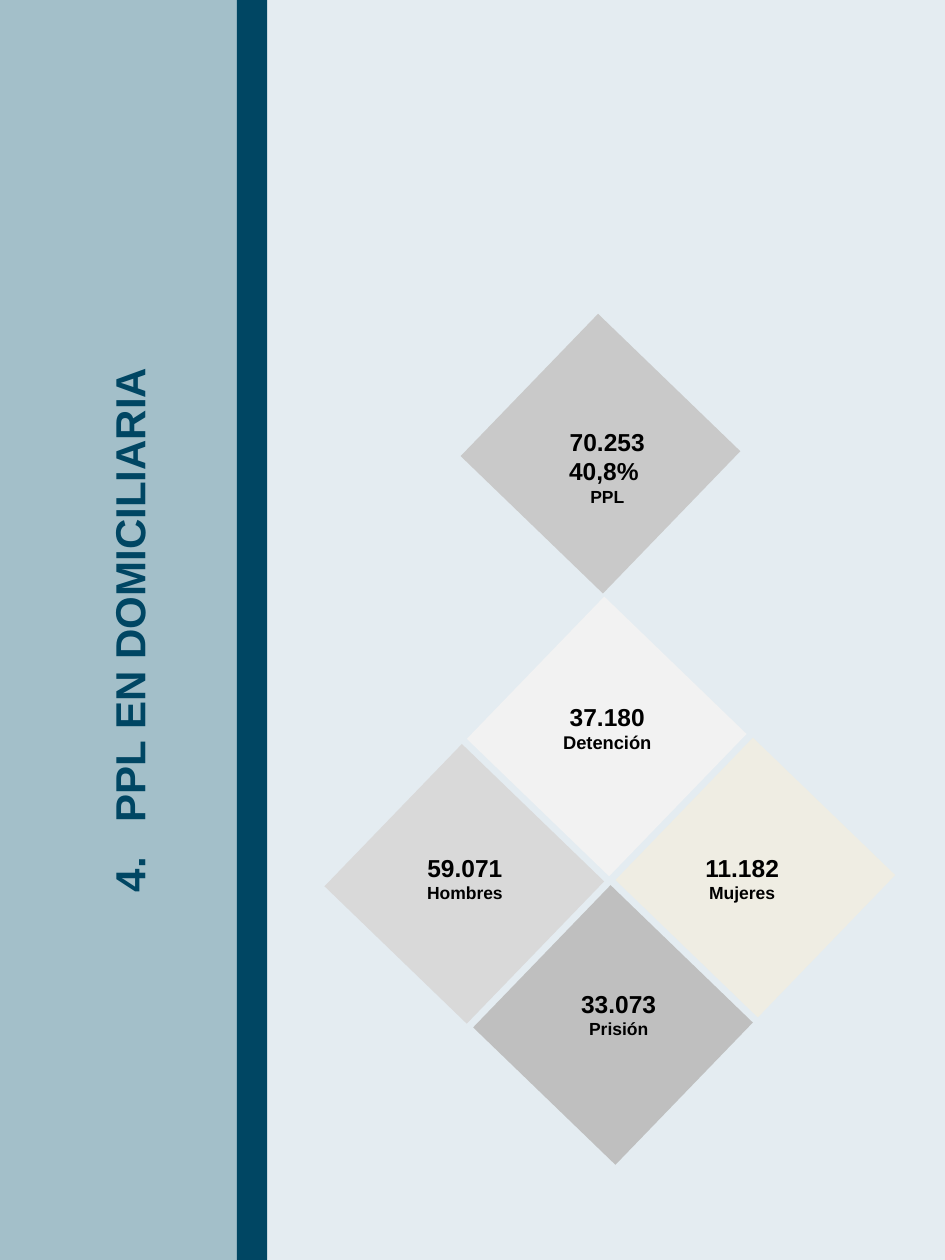
"""Build the slide on people under house arrest, with rotated tiles and labels."""
from pptx import Presentation, util as u
from pptx.dml.color import RGBColor
from pptx.enum import shapes, text

INK = {"back": "E4ECF1", "band": "A3BFC9", "navy": "004663", "black": "000000",
       "total": "C9C9C9", "held": "F2F2F2", "women": "EFEDE3",
       "men": "D9D9D9", "jail": "BFBFBF"}
WIDE, HIGH = 7.5, 10
BANDS = [("band", 0, 1.88), ("navy", 1.88, 0.24)]
TITLE = [("4.", 0), (" ", 13.34), ("PPL EN DOMICILIARIA", 0)]
MID, LONG, THICK = 1.02, 8.2, 0.61
SIDE, TURN = 1.57, 44
START, EAST, WEST = (4.03, 5.06), (1.18, 1.12), (-1.13, 1.17)
TILES = [("held", 0, 0), ("women", 1, 0), ("men", 0, 1),
         ("jail", 1, 1), ("total", -0.98, -0.98)]
LABELS = [
    (4.13, 5.52, [("37.180", 14), ("Detención", 10.5)]),
    (3, 6.72, [("59.071", 14), ("Hombres", 10)]),
    (5.2, 6.72, [("11.182", 14), ("Mujeres", 10)]),
    (4.13, 3.34, [("70.253", 14), ("40,8% ", 14), ("PPL", 10)]),
    (4.22, 7.8, [("33.073", 14), ("Prisión", 10)]),
]


def tint(name):
    return RGBColor.from_string(INK[name])


def write(para, words, size, color="black", gap=0):
    para.alignment = text.PP_ALIGN.CENTER
    run = para.add_run()
    run.text = words
    font = run.font
    font.name, font.size, font.bold = "Arial", u.Pt(size), True
    font.color.rgb = tint(color)
    if gap:
        run._r.get_or_add_rPr().set("spc", str(round(gap * 100)))


def block(slide, name, left, top, wide, high, turn=0):
    box = slide.shapes.add_shape(shapes.MSO_SHAPE.RECTANGLE,
                                 *map(u.Inches, (left, top, wide, high)))
    box.shadow.inherit = False
    box.fill.solid()
    box.fill.fore_color.rgb = tint(name)
    box.line.fill.background()
    box.rotation = turn


def head(slide):
    box = slide.shapes.title
    box.left, box.top = u.Inches(MID - LONG / 2), u.Inches((HIGH - THICK) / 2)
    box.width, box.height = u.Inches(LONG), u.Inches(THICK)
    box.rotation = 270
    frame = box.text_frame
    frame.vertical_anchor = text.MSO_ANCHOR.MIDDLE
    for words, gap in TITLE:
        write(frame.paragraphs[0], words, 24, color="navy", gap=gap)


def label(slide, left, top, lines):
    box = slide.shapes.add_textbox(*map(u.Inches, (left, top, 1.38, 0.59)))
    frame = box.text_frame
    frame.word_wrap = True
    for i, (words, size) in enumerate(lines):
        para = frame.add_paragraph() if i else frame.paragraphs[0]
        write(para, words, size)


def main():
    deck = Presentation()
    deck.slide_width, deck.slide_height = u.Inches(WIDE), u.Inches(HIGH)
    slide = deck.slides.add_slide(deck.slide_layouts[5])
    slide.background.fill.solid()
    slide.background.fill.fore_color.rgb = tint("back")
    for name, left, wide in BANDS:
        block(slide, name, left, 0, wide, HIGH)
    tree = slide.shapes._spTree
    tree.append(slide.shapes.title._element)
    head(slide)
    for name, east, west in TILES:
        left, top = (s + east * e + west * w for s, e, w in zip(START, EAST, WEST))
        block(slide, name, left, top, SIDE, SIDE, TURN)
    for left, top, lines in LABELS:
        label(slide, left, top, lines)
    deck.save("out.pptx")


if __name__ == "__main__":
    main()
